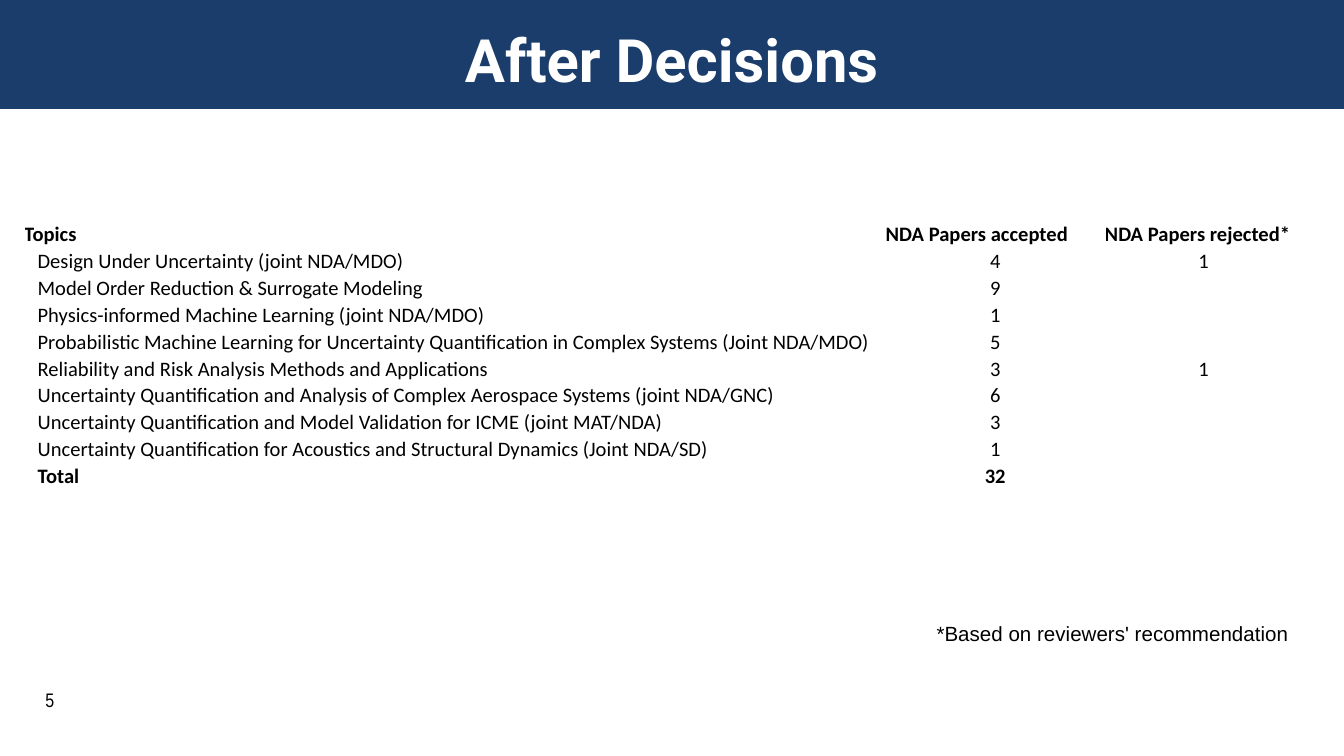
from lxml import etree
from pptx import Presentation
from pptx.dml.color import RGBColor
from pptx.enum import shapes, text
from pptx.oxml import ns
from pptx.util import Inches, Pt

NAVY = RGBColor(0x1B, 0x3D, 0x6C)
WHITE = RGBColor(0xFF, 0xFF, 0xFF)
BLACK = RGBColor(0, 0, 0)

LEFT, CENTER = text.PP_ALIGN.LEFT, text.PP_ALIGN.CENTER
TOP, MIDDLE, BOTTOM = (
    text.MSO_ANCHOR.TOP, text.MSO_ANCHOR.MIDDLE, text.MSO_ANCHOR.BOTTOM)

deck = Presentation()
deck.slide_width = Inches(10)
deck.slide_height = Inches(10 * 9 / 16)
slide = deck.slides.add_slide(deck.slide_layouts[6])


def write(paragraph, words, align, color, **formats):
    paragraph.alignment = align
    run = paragraph.add_run()
    run.text = words
    run.font.color.rgb = color
    for key, value in formats.items():
        setattr(run.font, key, value)


banner = slide.shapes.add_shape(
    shapes.MSO_SHAPE.RECTANGLE, 0, 0, deck.slide_width, Inches(0.81))
banner.shadow.inherit = False
banner.fill.solid()
banner.fill.fore_color.rgb = NAVY
banner.line.fill.background()

captions = [
    ("After Decisions", (0.25, 0.16, 9.5, 0.56), MIDDLE, True, CENTER, WHITE,
     {"name": "Roboto", "size": Pt(32), "bold": True}),
    ("5", (0.24, 5.07, 1, 0.19), TOP, True, LEFT, BLACK,
     {"name": "Arial Narrow", "size": Pt(10.5)}),
    ("*Based on reviewers' recommendation", (6.87, 4.57, 2.84, 0.29), TOP,
     False, LEFT, BLACK, {"name": "Arial", "size": Pt(11)}),
]
for words, place, anchor, wrap, align, color, formats in captions:
    frame = slide.shapes.add_textbox(*map(Inches, place)).text_frame
    frame.word_wrap = wrap
    frame.vertical_anchor = anchor
    write(frame.paragraphs[0], words, align, color, **formats)

decisions = [
    ("Topics", "NDA Papers accepted", "NDA Papers rejected*"),
    ("Design Under Uncertainty (joint NDA/MDO)", "4", "1"),
    ("Model Order Reduction & Surrogate Modeling", "9", ""),
    ("Physics-informed Machine Learning (joint NDA/MDO)", "1", ""),
    ("Probabilistic Machine Learning for Uncertainty Quantification in "
     "Complex Systems (Joint NDA/MDO)", "5", ""),
    ("Reliability and Risk Analysis Methods and Applications", "3", "1"),
    ("Uncertainty Quantification and Analysis of Complex Aerospace Systems "
     "(joint NDA/GNC)", "6", ""),
    ("Uncertainty Quantification and Model Validation for ICME "
     "(joint MAT/NDA)", "3", ""),
    ("Uncertainty Quantification for Acoustics and Structural Dynamics "
     "(Joint NDA/SD)", "1", ""),
    ("Total", "32", ""),
]
column_widths = [6.41, 1.63, 1.47]
row_height = 0.2

topics = slide.shapes.add_table(
    len(decisions), len(column_widths), Inches(0.18), Inches(1.64),
    Inches(sum(column_widths)), Inches(row_height * len(decisions))).table
topics.first_row = topics.horz_banding = False
for column, width in zip(topics.columns, column_widths):
    column.width = Inches(width)

for r, entries in enumerate(decisions):
    topics.rows[r].height = Inches(row_height)
    is_header = r == 0
    is_total = r == len(decisions) - 1
    for c, entry in enumerate(entries):
        cell = topics.cell(r, c)
        cell.fill.background()
        cell.vertical_anchor = BOTTOM
        cell.margin_top = cell.margin_right = cell.margin_bottom = 0
        cell.margin_left = Inches(0.1 if c == 0 and not is_header else 0)
        paragraph = cell.text_frame.paragraphs[0]
        if entry:
            write(paragraph, entry, LEFT if is_header or c == 0 else CENTER,
                  BLACK, name="Calibri", size=Pt(11),
                  bold=is_header or is_total)
        else:
            # An empty cell needs its own text size, or its row grows
            etree.SubElement(paragraph._p, ns.qn("a:endParaRPr"), sz="1100")

deck.save("out.pptx")
